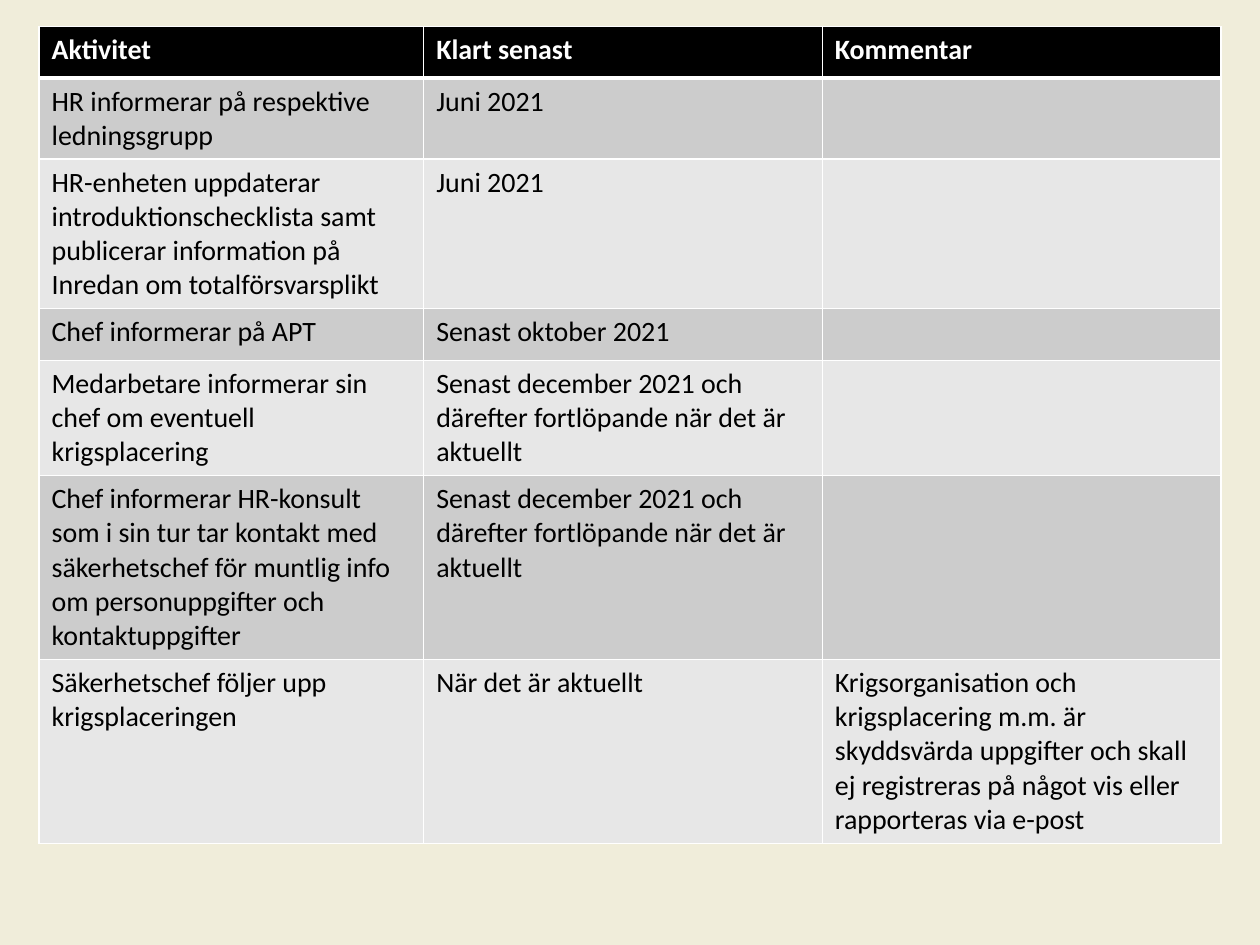
from lxml import etree
from pptx import Presentation
from pptx.dml.color import RGBColor
from pptx.oxml.ns import qn
from pptx.util import Inches, Pt

COLORS = {
    "background": "F0EDDA",
    "header": "000000",
    "odd": "CCCCCC",
    "even": "E7E7E7",
    "border": "FFFFFF",
    "header_text": "FFFFFF",
    "text": "000000",
}
FONT, SIZE = "Calibri", 16
COLUMN_SHARES = (0.3255, 0.33725, 0.33725)
LINE_HEIGHT, ROW_PADDING, MIN_ROW = 0.27, 0.1, 0.41
ROWS = [
    (1, ("Aktivitet", "Klart senast", "Kommentar")),
    (2, ("HR informerar på respektive ledningsgrupp", "Juni 2021", "")),
    (4, ("HR-enheten uppdaterar introduktionschecklista samt publicerar "
         "information på Inredan om totalförsvarsplikt", "Juni 2021", "")),
    (1, ("Chef informerar på APT", "Senast oktober 2021", "")),
    (3, ("Medarbetare informerar sin chef om eventuell krigsplacering",
         "Senast december 2021 och därefter fortlöpande när det är aktuellt", "")),
    (5, ("Chef informerar HR-konsult som i sin tur tar kontakt med säkerhetschef "
         "för muntlig info om personuppgifter och kontaktuppgifter",
         "Senast december 2021 och därefter fortlöpande när det är aktuellt", "")),
    (5, ("Säkerhetschef följer upp krigsplaceringen", "När det är aktuellt",
         "Krigsorganisation och krigsplacering m.m. är skyddsvärda uppgifter och "
         "skall ej registreras på något vis eller rapporteras via e-post")),
]


def rgb(name):
    """Return the named palette colour."""
    return RGBColor.from_string(COLORS[name])


def set_borders(cell, top, bottom):
    """Draw the cell borders, with top and bottom widths in points."""
    tcPr = cell._tc.get_or_add_tcPr()
    for side, width in (("L", 1), ("R", 1), ("T", top), ("B", bottom)):
        ln = etree.SubElement(tcPr, qn(f"a:ln{side}"), w=str(Pt(width)))
        fill = etree.SubElement(ln, qn("a:solidFill"))
        etree.SubElement(fill, qn("a:srgbClr"), val=COLORS["border"])


def format_cell(cell, text, row):
    """Fill in and style one cell according to its row."""
    set_borders(cell, 3 if row == 1 else 1, 3 if row == 0 else 1)
    cell.fill.solid()
    cell.fill.fore_color.rgb = rgb("header" if row == 0 else "odd" if row % 2 else "even")
    cell.text_frame.text = text
    for r in cell.text_frame.paragraphs[0].runs:
        r.font.name, r.font.size, r.font.bold = FONT, Pt(SIZE), row == 0
        r.font.color.rgb = rgb("header_text" if row == 0 else "text")


def add_activity_table(s, left, top, width):
    """Place the activity plan in the given box, with rows sized by their lines."""
    heights = [Inches(max(MIN_ROW, lines * LINE_HEIGHT + ROW_PADDING)) for lines, _ in ROWS]
    table = s.shapes.add_table(
        len(ROWS), len(COLUMN_SHARES), left, top, width, sum(heights)).table
    for column, share in zip(table.columns, COLUMN_SHARES):
        column.width = int(width * share)
    for i, (_, texts) in enumerate(ROWS):
        table.rows[i].height = heights[i]
        for j, text in enumerate(texts):
            format_cell(table.cell(i, j), text, i)


def main():
    """Build and save the slide."""
    prs = Presentation()
    prs.slide_width, prs.slide_height = Inches(10), Inches(7.5)
    s = prs.slides.add_slide(prs.slide_layouts[6])
    s.background.fill.solid()
    s.background.fill.fore_color.rgb = rgb("background")
    add_activity_table(s, Inches(0.31), Inches(0.21), Inches(9.38))
    prs.save("out.pptx")


if __name__ == "__main__":
    main()
